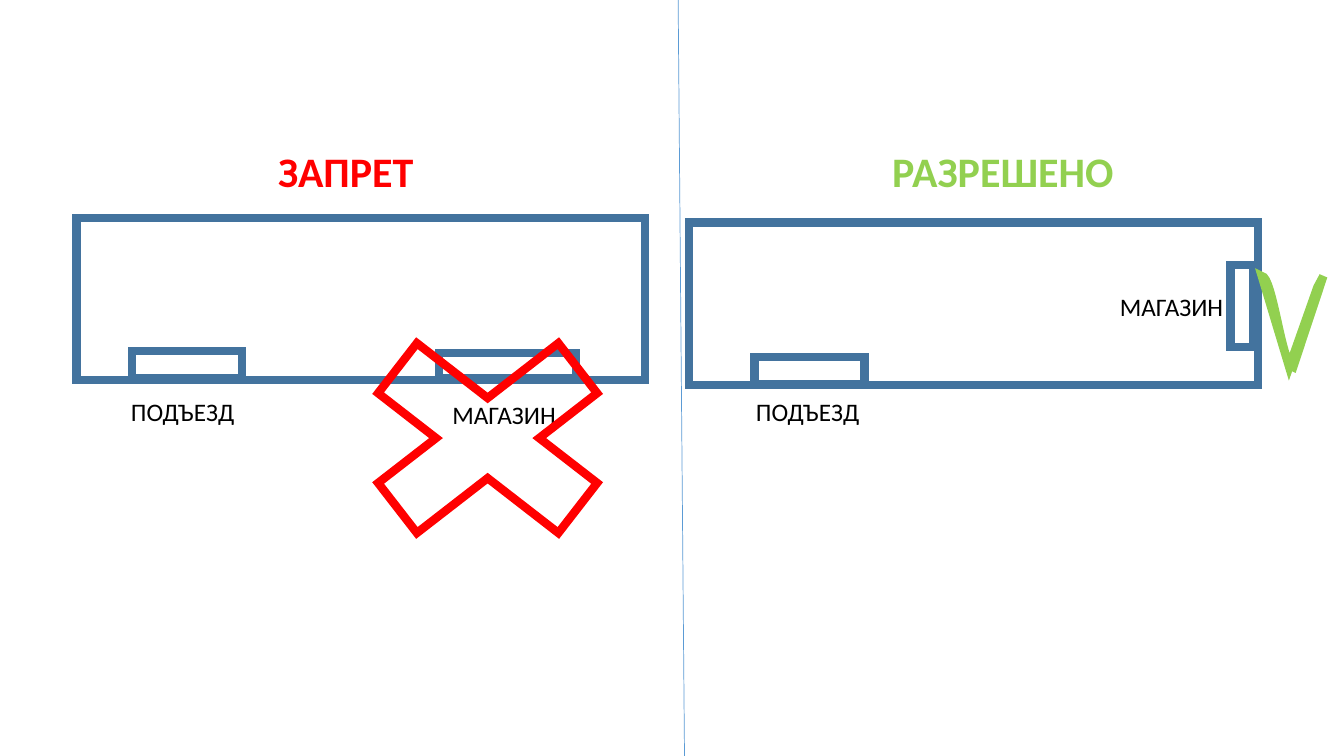
from lxml import etree
from pptx import Presentation
from pptx import util as u
from pptx.dml.color import RGBColor
from pptx.enum import shapes, text
from pptx.oxml import ns

RED = RGBColor(0xFF, 0x00, 0x00)
GREEN = RGBColor(0x92, 0xD0, 0x50)
STEEL = RGBColor(0x43, 0x73, 0x9E)
BLUE = RGBColor(0x5B, 0x9B, 0xD5)
WHITE = RGBColor(0xFF, 0xFF, 0xFF)
BLACK = RGBColor(0x00, 0x00, 0x00)

RECT = shapes.MSO_SHAPE.RECTANGLE
PROCESS = shapes.MSO_SHAPE.FLOWCHART_PROCESS
CROSS = shapes.MSO_SHAPE.MATH_MULTIPLY

HEADINGS = [
    (1, "ЗАПРЕТ", RED, (3.84, 3.53, 9.75, 1.55)),
    (3, "РАЗРЕШЕНО", GREEN, (20.4, 3.53, 9.75, 1.55)),
]
PLAN = [
    (RECT, (1.93, 5.49, 14.33, 4.09), WHITE, STEEL),
    (PROCESS, (3.33, 8.84, 2.77, 0.69), None, STEEL),
    ("ПОДЪЕЗД", (3.05, 9.86)),
    (PROCESS, (11.07, 8.89, 3.45, 0.64), WHITE, STEEL),
    ("МАГАЗИН", (11.15, 9.93)),
    (CROSS, (7.92, 7.65, 8.74, 6.78), None, RED),
    (RECT, (17.37, 5.61, 14.33, 4.09), WHITE, STEEL),
    (PROCESS, (19.02, 8.99, 2.77, 0.69), None, STEEL),
    ("ПОДЪЕЗД", (18.8, 9.86)),
    (PROCESS, (31.01, 6.68, 0.58, 2.06), None, STEEL),
    ("МАГАЗИН", (27.97, 7.21)),
]
LABEL_SIZE = (3.3, 1.8)
DIVIDER = (17.09, 0, 17.25, 19.05)
TICK_CURVE = [(31.8, 6.96), (32.08, 6.96), (32.31, 9.25), (32.59, 9.25)]
TICK_CORNERS = [(33.35, 6.96), (33.2, 7.24), (32.49, 9.25)]
CURVE_STEPS = 16


def lengths(values):
    return [u.Cm(value) for value in values]


def write(box, wording, size=18, color=BLACK, bold=False, align=text.PP_ALIGN.LEFT):
    frame = box.text_frame
    frame.word_wrap = True
    frame.auto_size = text.MSO_AUTO_SIZE.NONE
    frame.vertical_anchor = text.MSO_ANCHOR.TOP
    para = frame.paragraphs[0]
    para.alignment = align
    para.space_before = u.Pt(0)
    span = para.add_run()
    span.text = wording
    span.font.name = "Calibri"
    span.font.size = u.Pt(size)
    span.font.bold = bold
    span.font.color.rgb = color


def outline(shape, fill, color):
    shape.shadow.inherit = False
    if fill is None:
        shape.fill.background()
    else:
        shape.fill.solid()
        shape.fill.fore_color.rgb = fill
    shape.line.color.rgb = color
    shape.line.width = u.Pt(6)
    line = shape.element.spPr.find(ns.qn("a:ln"))
    etree.SubElement(line, ns.qn("a:miter"), lim="800000")


def curve_point(t):
    weights = ((1 - t) ** 3, 3 * t * (1 - t) ** 2, 3 * t * t * (1 - t), t ** 3)
    return tuple(sum(w * point[axis] for w, point in zip(weights, TICK_CURVE))
                 for axis in (0, 1))


def add_headings(page):
    kept = {number for number, *_ in HEADINGS}
    for holder in list(page.placeholders):
        if holder.placeholder_format.idx not in kept:
            holder.element.getparent().remove(holder.element)
    holders = {h.placeholder_format.idx: h for h in page.placeholders}
    for number, wording, color, area in HEADINGS:
        box = holders[number]
        box.left, box.top, box.width, box.height = lengths(area)
        write(box, wording, size=30, color=color, bold=True, align=text.PP_ALIGN.CENTER)


def add_plan(page):
    for kind, area, *colors in PLAN:
        if isinstance(kind, str):
            write(page.shapes.add_textbox(*lengths(area + LABEL_SIZE)), kind)
        else:
            outline(page.shapes.add_shape(kind, *lengths(area)), *colors)


def add_divider(page):
    divider = page.shapes.add_connector(shapes.MSO_CONNECTOR.STRAIGHT, *lengths(DIVIDER))
    divider.line.color.rgb = BLUE
    divider.line.width = u.Pt(0.5)
    etree.SubElement(divider.element.spPr, ns.qn("a:effectLst"))


def add_tick(page):
    curve = [curve_point(step / CURVE_STEPS) for step in range(CURVE_STEPS + 1)]
    start, *rest = [lengths(point) for point in curve + TICK_CORNERS]
    builder = page.shapes.build_freeform(*start)
    builder.add_line_segments(rest, close=True)
    outline(builder.convert_to_shape(), WHITE, GREEN)


def main():
    deck = Presentation()
    deck.slide_width, deck.slide_height = lengths((33.87, 19.05))
    page = deck.slides.add_slide(deck.slide_layouts.get_by_name("Comparison"))
    add_headings(page)
    add_plan(page)
    add_divider(page)
    add_tick(page)
    deck.save("out.pptx")


if __name__ == "__main__":
    main()
